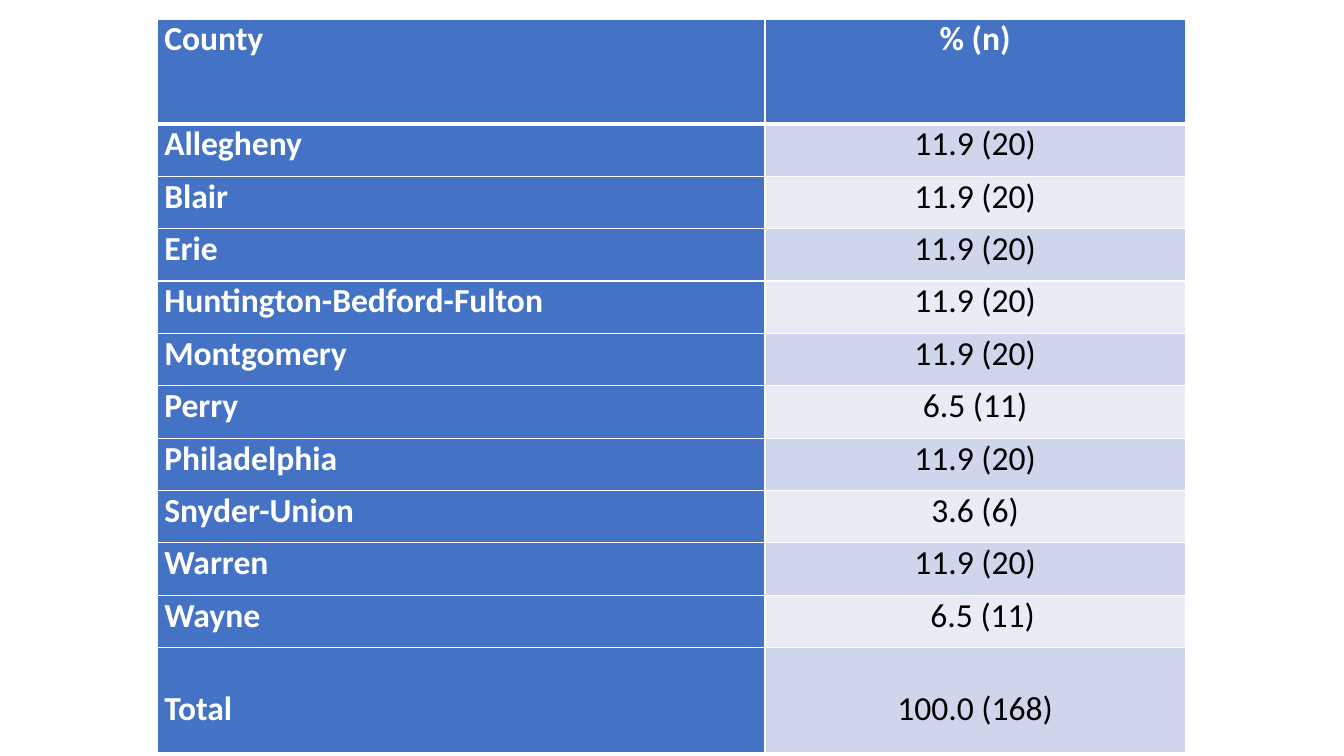
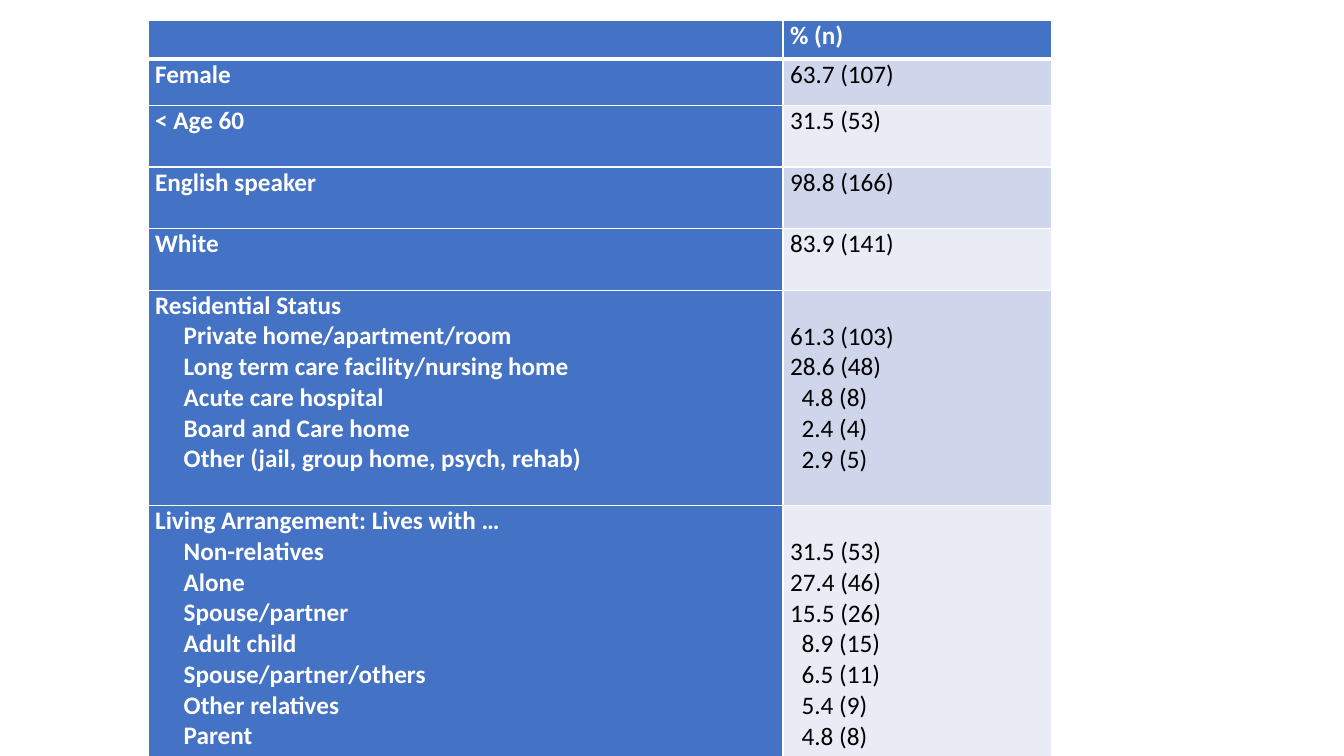
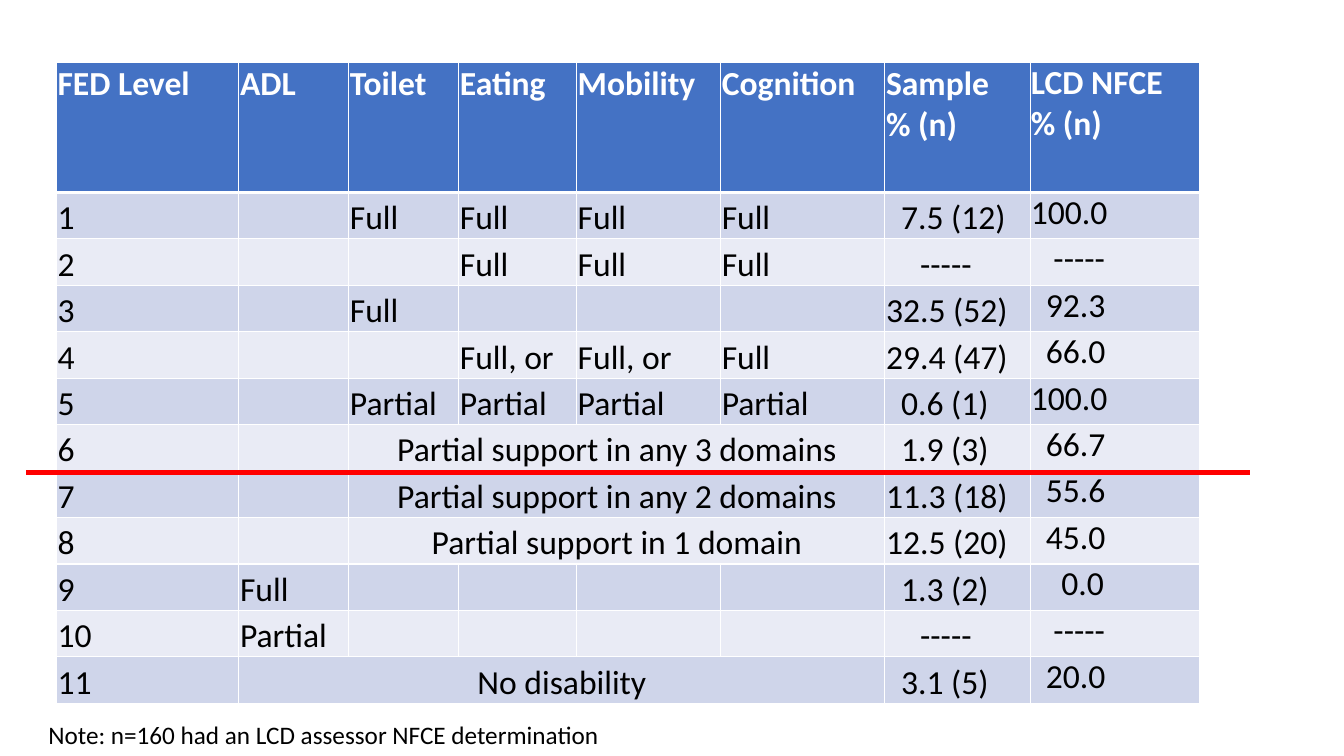
"""Build three slides of survey tables: counties, demographics and disability levels."""
from dataclasses import dataclass
from typing import Optional, Sequence

from lxml import etree
from pptx import Presentation
from pptx import util as u
from pptx.dml.color import RGBColor
from pptx.enum import shapes, text
from pptx.oxml import ns

FONT = "Calibri"
BLACK = RGBColor(0x00, 0x00, 0x00)
WHITE = RGBColor(0xFF, 0xFF, 0xFF)
BLUE = RGBColor(0x44, 0x72, 0xC4)
RED = RGBColor(0xFF, 0x00, 0x00)
BANDS = (RGBColor(0xE9, 0xEB, 0xF5), RGBColor(0xCF, 0xD5, 0xEA))
LEFT, CENTER = text.PP_ALIGN.LEFT, text.PP_ALIGN.CENTER
TOP, BOTTOM = text.MSO_ANCHOR.TOP, text.MSO_ANCHOR.BOTTOM
THIN, THICK = 1, 3
DASHES = "-----"


@dataclass
class Line:
    """One paragraph of a cell, with its indent in centimetres."""
    words: str
    indent: float = 0


@dataclass
class Entry:
    """The content of one table cell."""
    lines: Sequence[Line] = ()
    align: text.PP_ALIGN = LEFT
    anchor: text.MSO_ANCHOR = TOP
    side: float = 0.18
    top: float = 0


@dataclass
class Grid:
    """A table: its place, column widths, row heights and entries, in centimetres."""
    left: float
    top: float
    widths: Sequence[float]
    heights: Sequence[float]
    rows: Sequence[Sequence[Optional[Entry]]]
    size: int
    label_column: bool = True


COUNTIES = (
    ("Allegheny", "11.9 (20)"), ("Blair", "11.9 (20)"), ("Erie", "11.9 (20)"),
    ("Huntington-Bedford-Fulton", "11.9 (20)"), ("Montgomery", "11.9 (20)"),
    ("Perry", "6.5 (11)"), ("Philadelphia", "11.9 (20)"), ("Snyder-Union", "3.6 (6)"),
    ("Warren", "11.9 (20)"), ("Wayne", "6.5 (11)"),
)
TRAITS = (
    ("Female", "63.7 (107)"), ("< Age 60", "31.5 (53)"),
    ("English speaker", "98.8 (166)"), ("White", "83.9 (141)"),
)
GROUPS = (
    ("Residential Status", (
        ("Private home/apartment/room", "61.3 (103)"),
        ("Long term care facility/nursing home", "28.6 (48)"),
        ("Acute care hospital", "4.8 (8)"),
        ("Board and Care home", "2.4 (4)"),
        ("Other (jail, group home, psych, rehab)", "2.9 (5)"),
    )),
    ("Living Arrangement: Lives with …", (
        ("Non-relatives", "31.5 (53)"), ("Alone", "27.4 (46)"),
        ("Spouse/partner", "15.5 (26)"), ("Adult child", "8.9 (15)"),
        ("Spouse/partner/others", "6.5 (11)"), ("Other relatives", "5.4 (9)"),
        ("Parent", "4.8 (8)"),
    )),
)
LEVEL_HEADS = ("FED Level", "ADL", "Toilet", "Eating", "Mobility", "Cognition",
               "Sample\n% (n)", "LCD NFCE\n% (n)")
LEVELS = (
    ("1", "", "Full", "Full", "Full", "Full", "7.5 (12)", "100.0"),
    ("2", "", "", "Full", "Full", "Full", DASHES, DASHES),
    ("3", "", "Full", "", "", "", "32.5 (52)", "92.3"),
    ("4", "", "", "Full, or", "Full, or", "Full", "29.4 (47)", "66.0"),
    ("5", "", "Partial", "Partial", "Partial", "Partial", "0.6 (1)", "100.0"),
    ("6", "", "Partial support in any 3 domains", None, None, None, "1.9 (3)", "66.7"),
    ("7", "", "Partial support in any 2 domains", None, None, None, "11.3 (18)", "55.6"),
    ("8", "", "Partial support in 1 domain", None, None, None, "12.5 (20)", "45.0"),
    ("9", "Full", "", "", "", "", "1.3 (2)", "0.0"),
    ("10", "Partial", "", "", "", "", DASHES, DASHES),
    ("11", "No disability", None, None, None, None, "3.1 (5)", "20.0"),
)


def entry(words: str, **layout) -> Entry:
    """Make an entry with one unindented paragraph per line of text."""
    return Entry([Line(part) for part in words.splitlines()], **layout)


def number_line(words: str, digits: int, size: int, dash_indent: float = 0) -> Line:
    """Indent a number by one digit width for each whole digit it lacks."""
    if words == DASHES:
        return Line(words, dash_indent)
    missing = digits - words.index(".")
    return Line(words, round(missing * size * 0.016, 2))


def write(para, words: str, *, size: int, color: RGBColor = BLACK, bold: bool = False,
          align: text.PP_ALIGN = LEFT, indent: float = 0) -> None:
    """Put formatted text into a paragraph."""
    para.alignment = align
    if indent:
        properties = para._p.get_or_add_pPr()
        properties.set("marL", str(u.Cm(indent)))
        properties.set("indent", "0")
    span = para.add_run()
    span.text = words
    span.font.name = FONT
    span.font.size = u.Pt(size)
    span.font.bold = bold
    span.font.color.rgb = color


def draw_borders(cell, top: int, bottom: int) -> None:
    """Give a cell white borders, in points."""
    properties = cell._tc.get_or_add_tcPr()
    edges = (("a:lnL", THIN), ("a:lnR", THIN), ("a:lnT", top), ("a:lnB", bottom))
    for place, (tag, width) in enumerate(edges):
        edge = etree.Element(ns.qn(tag), w=str(u.Pt(width)))
        fill = etree.SubElement(edge, ns.qn("a:solidFill"))
        etree.SubElement(fill, ns.qn("a:srgbClr"), val=str(WHITE))
        properties.insert(place, edge)


def draw_cell(cell, content: Optional[Entry], *, fill: RGBColor, strong: bool,
              size: int) -> None:
    """Fill one cell with its colour and paragraphs."""
    cell.fill.solid()
    cell.fill.fore_color.rgb = fill
    if content is None:
        return
    cell.margin_left = cell.margin_right = u.Cm(content.side)
    cell.margin_top, cell.margin_bottom = u.Cm(content.top), 0
    cell.vertical_anchor = content.anchor
    frame = cell.text_frame
    for index, line in enumerate(content.lines):
        para = frame.add_paragraph() if index else frame.paragraphs[0]
        write(para, line.words, size=size, color=WHITE if strong else BLACK,
              bold=strong, align=content.align, indent=line.indent)


def draw_grid(page, grid: Grid) -> None:
    """Draw a banded table with a blue header."""
    frame = page.shapes.add_table(
        len(grid.rows), len(grid.widths), u.Cm(grid.left), u.Cm(grid.top),
        u.Cm(sum(grid.widths)), u.Cm(sum(grid.heights)))
    table = frame.table
    for column, width in zip(table.columns, grid.widths):
        column.width = u.Cm(width)
    for row, height in zip(table.rows, grid.heights):
        row.height = u.Cm(height)
    for r, contents in enumerate(grid.rows):
        for c, content in enumerate(contents):
            cell = table.cell(r, c)
            strong = r == 0 or (grid.label_column and c == 0)
            draw_cell(cell, content, fill=BLUE if strong else BANDS[r % 2],
                      strong=strong, size=grid.size)
            draw_borders(cell, THICK if r == 1 else THIN, THICK if r == 0 else THIN)
        if None in contents:
            first = contents.index(None) - 1
            table.cell(r, first).merge(table.cell(r, first + contents.count(None)))


def county_grid() -> Grid:
    """Lay out the share of each county."""
    rows = [[entry("County"), entry("% (n)", align=CENTER)]]
    rows += [[entry(name), entry(share, align=CENTER)] for name, share in COUNTIES]
    rows[-1][1].lines[0].indent = 0.38
    rows.append([entry("Total", top=1.03), entry("100.0 (168)", align=CENTER, top=1.03)])
    heights = [2.64] + [1.32] * len(COUNTIES) + [2.64]
    return Grid(3.96, 0.48, (15.32, 10.59), heights, rows, 24)


def trait_grid() -> Grid:
    """Lay out the traits and the grouped living situations."""
    size = 18
    rows = [[entry(""), entry("% (n)")]]
    rows += [[entry(name), entry(share)] for name, share in TRAITS]
    for heading, members in GROUPS:
        names = [Line(heading)] + [Line(name, 0.72) for name, _ in members]
        shares = [number_line(share, 2, size) for _, share in members]
        rows.append([Entry(names), Entry(shares, top=0.78)])
    heights = (0.97, 1.17, 1.55, 1.55, 1.55, 5.43, 6.35)
    return Grid(3.73, 0.52, (16.0, 6.78), heights, rows, size)


def level_row(words: Sequence[Optional[str]], size: int) -> list:
    """Lay out one disability level; None joins the cell to its left."""
    *domains, sample, share = words
    row = []
    for index, domain in enumerate(domains):
        joined = domains[index + 1:index + 2] == [None]
        row.append(None if domain is None else entry(
            domain, align=CENTER if joined else LEFT, anchor=BOTTOM, side=0.03, top=0.03))
    row.append(Entry([number_line(sample, 2, size, 0.86)], anchor=BOTTOM, side=0.03, top=0.03))
    row.append(Entry([number_line(share, 3, size, 0.57)], side=0))
    return row


def level_grid() -> Grid:
    """Lay out the disability levels."""
    size = 24
    rows = [[entry(head, side=0.03, top=0.03) for head in LEVEL_HEADS[:-1]]
            + [entry(LEVEL_HEADS[-1], side=0)]]
    rows += [level_row(words, size) for words in LEVELS]
    widths = (4.6, 2.77, 2.77, 2.97, 3.63, 4.14, 3.68, 4.24)
    heights = [3.28] + [1.17] * len(LEVELS)
    return Grid(1.42, 1.57, widths, heights, rows, size, label_column=False)


def draw_cutoff(page) -> None:
    """Draw the red line between levels 6 and 7."""
    line = page.shapes.add_connector(
        shapes.MSO_CONNECTOR.STRAIGHT, u.Cm(0.66), u.Cm(11.91), u.Cm(31.5), u.Cm(11.91))
    line.line.color.rgb = RED
    line.line.width = u.Pt(3.5)
    etree.SubElement(line._element.spPr, ns.qn("a:effectLst"))


def draw_note(page) -> None:
    """Write the note below the levels."""
    box = page.shapes.add_textbox(u.Cm(0.97), u.Cm(18.01), u.Cm(29.26), u.Cm(1.8))
    box.text_frame.word_wrap = True
    write(box.text_frame.paragraphs[0],
          "Note: n=160 had an LCD assessor NFCE determination", size=18)


def main() -> None:
    """Build and save the deck."""
    deck = Presentation()
    deck.slide_width, deck.slide_height = u.Cm(33.87), u.Cm(19.05)
    for grid in (county_grid(), trait_grid(), level_grid()):
        page = deck.slides.add_slide(deck.slide_layouts[6])
        draw_grid(page, grid)
    draw_cutoff(page)
    draw_note(page)
    deck.save("out.pptx")


if __name__ == "__main__":
    main()
